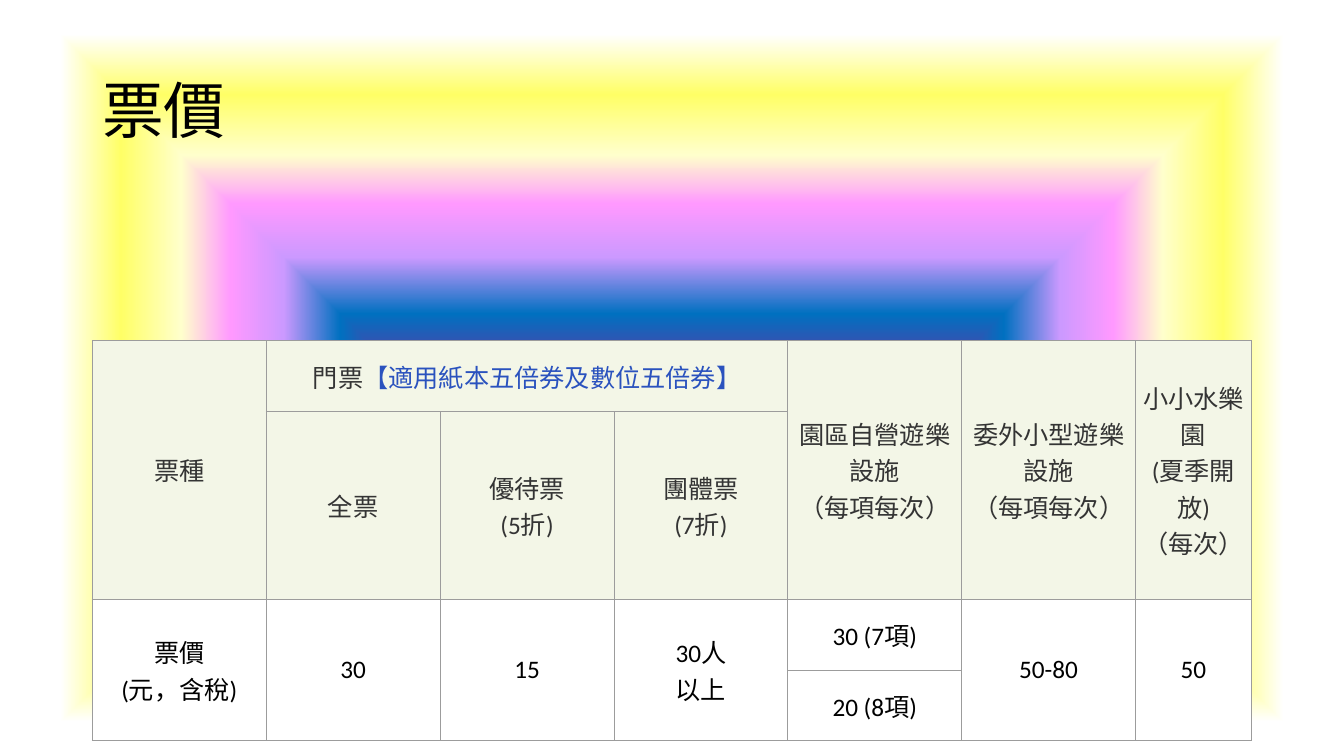
"""Build the ticket price slide with its gradient background and price table."""
import pptx
import pptx.dml.color
import pptx.enum.text
import pptx.oxml
import pptx.oxml.ns
import pptx.util

Pt = pptx.util.Pt
FONT = "Calibri"
TITLE = "票價"
BLACK, GREY, BLUE = "000000", "343434", "2A52BE"
HEADER_FILL, PRICE_FILL, BORDER = "F3F6E7", "FFFFFF", "9C9C9C"
LEFT, WIDTH = 66, 828
TABLE_TOP = 243.2
COLUMN_WIDTHS = [124.2] * 6 + [82.8]
ROW_HEIGHTS = [50.7, 134.3, 50.4, 50.4]
HEADER_ROWS = 2
GRADIENT = [(0, "7030A0"), (17, "0070C0"), (32, "CC99FF"), (46, "FF99FF"),
            (59, "FFFFCC"), (75, "FFFF66"), (91, "FFFFFF")]
CELLS = [
    (0, 0, 2, 1, "票種"),
    (0, 1, 1, 3, "門票"),
    (0, 4, 2, 1, "園區自營遊樂設施\n（每項每次）"),
    (0, 5, 2, 1, "委外小型遊樂設施\n（每項每次）"),
    (0, 6, 2, 1, "小小水樂園\n(夏季開放)\n（每次）"),
    (1, 1, 1, 1, "全票"),
    (1, 2, 1, 1, "優待票\n(5折)"),
    (1, 3, 1, 1, "團體票\n(7折)"),
    (2, 0, 2, 1, "票價\n(元，含稅)"),
    (2, 1, 2, 1, "30"),
    (2, 2, 2, 1, "15"),
    (2, 3, 2, 1, "30人\n以上"),
    (2, 4, 1, 1, "30 (7項)"),
    (2, 5, 2, 1, "50-80"),
    (2, 6, 2, 1, "50"),
    (3, 4, 1, 1, "20 (8項)"),
]
VOUCHER_NOTES = {(0, 1): "【適用紙本五倍券及數位五倍券】"}


def color(value):
    return pptx.dml.color.RGBColor.from_string(value)


def format_run(run, size, value):
    run.font.name = FONT
    run.font.size = Pt(size)
    run.font.color.rgb = color(value)


def paint_background(slide):
    slide.background.fill.solid()
    properties = slide._element.cSld.bg.bgPr
    stops = "".join(f'<a:gs pos="{position * 1000}"><a:srgbClr val="{value}"/></a:gs>'
                    for position, value in GRADIENT)
    gradient = pptx.oxml.parse_xml(
        f'<a:gradFill {pptx.oxml.ns.nsdecls("a")} rotWithShape="1"><a:gsLst>{stops}</a:gsLst>'
        '<a:path path="shape"><a:fillToRect l="50000" t="50000" r="50000" b="50000"/></a:path>'
        '</a:gradFill>')
    properties.replace(properties[0], gradient)


def add_title(slide):
    shape = slide.shapes.add_textbox(Pt(LEFT), Pt(28.8), Pt(WIDTH), Pt(104.4))
    frame = shape.text_frame
    frame.word_wrap = True
    frame.vertical_anchor = pptx.enum.text.MSO_ANCHOR.MIDDLE
    frame.text = TITLE
    paragraph = frame.paragraphs[0]
    paragraph.line_spacing = 0.9
    format_run(paragraph.runs[0], 44, BLACK)


def style_cell(cell, fill):
    properties = cell._tc.get_or_add_tcPr()
    for side in "LRTB":
        properties.append(pptx.oxml.parse_xml(
            f'<a:ln{side} {pptx.oxml.ns.nsdecls("a")} w="{Pt(0.75)}"><a:solidFill>'
            f'<a:srgbClr val="{BORDER}"/></a:solidFill></a:ln{side}>'))
    cell.fill.solid()
    cell.fill.fore_color.rgb = color(fill)
    cell.vertical_anchor = pptx.enum.text.MSO_ANCHOR.MIDDLE
    cell.margin_left = cell.margin_right = cell.margin_top = cell.margin_bottom = Pt(2.2)


def add_price_table(slide):
    table = slide.shapes.add_table(len(ROW_HEIGHTS), len(COLUMN_WIDTHS), Pt(LEFT), Pt(TABLE_TOP),
                                   Pt(WIDTH), Pt(sum(ROW_HEIGHTS))).table
    table.first_row = table.horz_banding = False
    for column, width in zip(table.columns, COLUMN_WIDTHS):
        column.width = Pt(width)
    for index, (row, height) in enumerate(zip(table.rows, ROW_HEIGHTS)):
        row.height = Pt(height)
        for cell in row.cells:
            style_cell(cell, HEADER_FILL if index < HEADER_ROWS else PRICE_FILL)
    for row, column, row_span, column_span, text in CELLS:
        cell = table.cell(row, column)
        if row_span * column_span > 1:
            cell.merge(table.cell(row + row_span - 1, column + column_span - 1))
        paragraph = cell.text_frame.paragraphs[0]
        paragraph.text = text
        paragraph.alignment = pptx.enum.text.PP_ALIGN.CENTER
        for run in paragraph.runs:
            format_run(run, 18, GREY if row < HEADER_ROWS else BLACK)
        if (row, column) in VOUCHER_NOTES:
            note = paragraph.add_run()
            note.text = VOUCHER_NOTES[row, column]
            format_run(note, 18, BLUE)


def main():
    presentation = pptx.Presentation()
    presentation.slide_width, presentation.slide_height = Pt(960), Pt(540)
    slide = presentation.slides.add_slide(presentation.slide_layouts[6])
    paint_background(slide)
    add_title(slide)
    add_price_table(slide)
    presentation.save("out.pptx")


if __name__ == "__main__":
    main()
